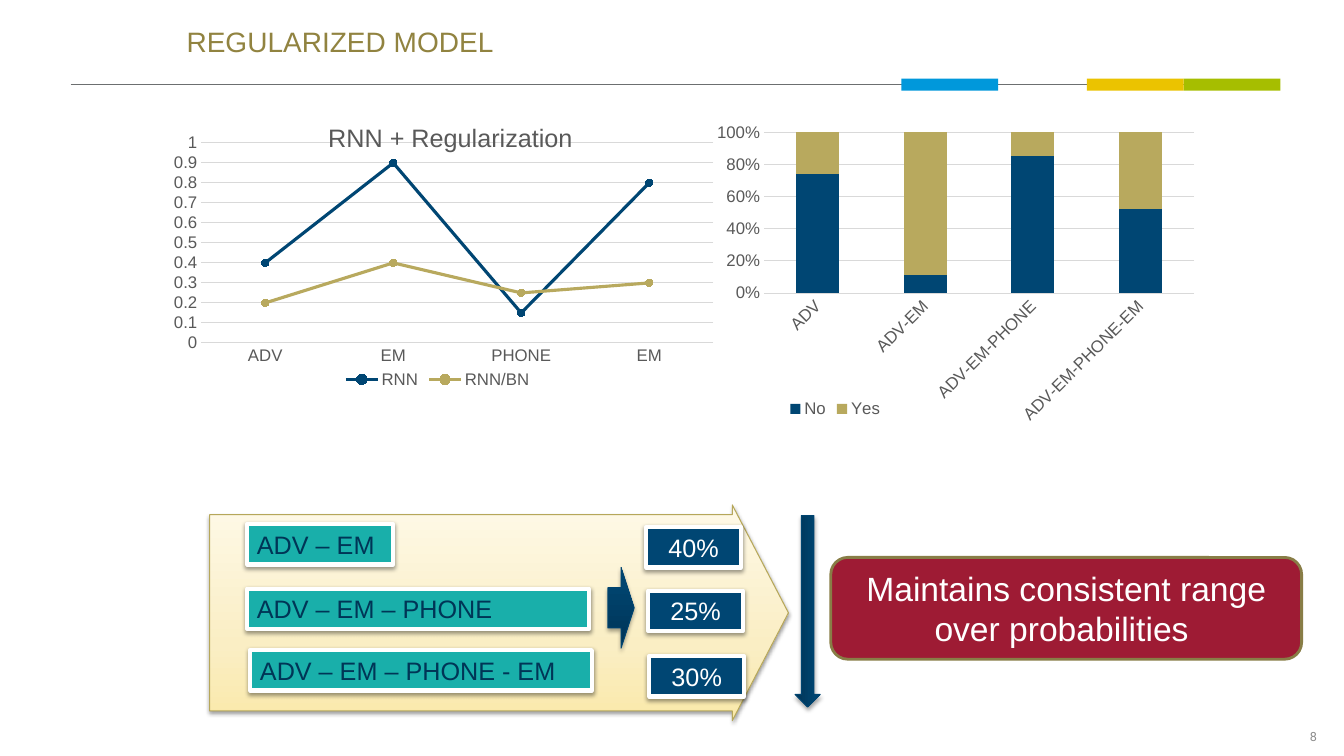
from lxml import etree
from pptx import Presentation
from pptx.chart.data import CategoryChartData
from pptx.dml.color import RGBColor
from pptx.enum.chart import XL_CHART_TYPE, XL_LEGEND_POSITION, XL_MARKER_STYLE, XL_TICK_MARK
from pptx.enum.shapes import MSO_CONNECTOR, MSO_SHAPE
from pptx.enum.text import MSO_ANCHOR, PP_ALIGN
from pptx.oxml import parse_xml
from pptx.oxml.ns import nsdecls, qn
from pptx.util import Inches, Pt

NAVY = RGBColor(0x00, 0x46, 0x73)
DARK_NAVY = RGBColor(0x00, 0x34, 0x56)
DEEP_BLUE = RGBColor(0x00, 0x44, 0x70)
INK = RGBColor(0x00, 0x35, 0x56)
KHAKI = RGBColor(0xB8, 0xA9, 0x5E)
KHAKI_EDGE = RGBColor(0xB6, 0xA7, 0x5A)
OLIVE = RGBColor(0x91, 0x83, 0x40)
DARK_OLIVE = RGBColor(0x88, 0x7D, 0x46)
TEAL = RGBColor(0x19, 0xAF, 0xAA)
CRIMSON = RGBColor(0x9E, 0x1B, 0x34)
WHITE = RGBColor(0xFF, 0xFF, 0xFF)
GRID = RGBColor(0xD9, 0xD9, 0xD9)
LABEL = RGBColor(0x59, 0x59, 0x59)
RULE = RGBColor(0x6C, 0x6F, 0x70)
PAGE_GRAY = RGBColor(0x8C, 0x8C, 0x8C)
GREEN = RGBColor(0xA6, 0xBE, 0x00)
YELLOW = RGBColor(0xEB, 0xC3, 0x00)
SKY = RGBColor(0x00, 0x98, 0xDB)
CREAM_STOPS = ((0, RGBColor(0xFA, 0xE9, 0xAA)), (35, RGBColor(0xFA, 0xEE, 0xC4)),
               (100, RGBColor(0xFE, 0xF9, 0xE7)))
NAVY_STOPS = ((0, DARK_NAVY), (80, RGBColor(0x00, 0x44, 0x6F)), (100, DEEP_BLUE))


class SlideBuilder:
    font_name = "Arial"

    def __init__(self, slide):
        self.slide = slide

    def style_font(self, font, size, color, name=None):
        font.name = name or self.font_name
        font.size = Pt(size)
        font.bold = False
        font.color.rgb = color

    def add_text(self, frame, text, size, color, align=PP_ALIGN.LEFT, name=None):
        frame.vertical_anchor = MSO_ANCHOR.MIDDLE
        paragraph = frame.paragraphs[0]
        paragraph.alignment = align
        run = paragraph.add_run()
        run.text = text
        self.style_font(run.font, size, color, name)

    def title(self, text, box):
        shape = self.slide.shapes.title
        shape.left, shape.top, shape.width, shape.height = map(Inches, box)
        frame = shape.text_frame
        frame.margin_left = frame.margin_right = frame.margin_top = frame.margin_bottom = 0
        self.add_text(frame, text, 20, OLIVE)
        frame.paragraphs[0].line_spacing = 0.97

    def page_number(self, text, box):
        frame = self.slide.shapes.add_textbox(*map(Inches, box)).text_frame
        frame.word_wrap = True
        self.add_text(frame, text, 9, PAGE_GRAY, PP_ALIGN.RIGHT, "Roboto")

    def rule(self, left, right, top):
        line = self.slide.shapes.add_connector(
            MSO_CONNECTOR.STRAIGHT, Inches(left), Inches(top), Inches(right), Inches(top))
        line.line.color.rgb = RULE
        line.line.width = Pt(1)
        etree.SubElement(line._element.spPr, qn("a:effectLst"))

    def shape(self, kind, box, fill=None, edge=None, edge_width=0.75):
        shape = self.slide.shapes.add_shape(kind, *map(Inches, box))
        shape.shadow.inherit = False
        if fill is not None:
            shape.fill.solid()
            shape.fill.fore_color.rgb = fill
        if edge is None:
            shape.line.fill.background()
        else:
            shape.line.color.rgb = edge
            shape.line.width = Pt(edge_width)
        return shape

    def cast_shadow(self, shape, opacity, distance):
        effects = shape._element.spPr.find(qn("a:effectLst"))
        effects.append(parse_xml(
            f'<a:outerShdw {nsdecls("a")} blurRad="{Pt(3.1)}" dist="{Pt(distance)}" '
            f'dir="5400000" rotWithShape="0"><a:srgbClr val="000000">'
            f'<a:alpha val="{opacity * 1000}"/></a:srgbClr></a:outerShdw>'))

    def arrow(self, box, stops, edge, opacity, distance, adjustments=(0.5, 0.5), rotation=0):
        shape = self.shape(MSO_SHAPE.RIGHT_ARROW, box, edge=edge)
        for index, value in enumerate(adjustments):
            shape.adjustments[index] = value
        shape.rotation = rotation
        marks = "".join(f'<a:gs pos="{position * 1000}"><a:srgbClr val="{color}"/></a:gs>'
                        for position, color in stops)
        geometry = shape._element.spPr.find(qn("a:prstGeom"))
        geometry.addnext(parse_xml(
            f'<a:gradFill {nsdecls("a")} rotWithShape="1"><a:gsLst>{marks}</a:gsLst>'
            f'<a:lin ang="16200000" scaled="0"/></a:gradFill>'))
        self.cast_shadow(shape, opacity, distance)

    def label(self, text, box, fill, color, align=PP_ALIGN.LEFT, wrap=True):
        shape = self.shape(MSO_SHAPE.RECTANGLE, box, fill, WHITE, 3)
        self.cast_shadow(shape, 38, 1.6)
        shape.text_frame.word_wrap = wrap
        self.add_text(shape.text_frame, text, 18, color, align)

    def callout(self, text, box):
        shape = self.shape(MSO_SHAPE.ROUNDED_RECTANGLE, box, CRIMSON, DARK_OLIVE, 2)
        shape.text_frame.word_wrap = True
        self.add_text(shape.text_frame, text, 24, WHITE, PP_ALIGN.CENTER)

    def place(self, element, left, top, width=None, height=None):
        for old in element.findall(qn("c:layout")):
            element.remove(old)
        target = '<c:layoutTarget val="inner"/>' if width else ""
        size = f'<c:w val="{width}"/><c:h val="{height}"/>' if width else ""
        layout = parse_xml(
            f'<c:layout {nsdecls("c")}><c:manualLayout>{target}<c:xMode val="edge"/>'
            f'<c:yMode val="edge"/><c:x val="{left}"/><c:y val="{top}"/>{size}'
            f'</c:manualLayout></c:layout>')
        if element.tag == qn("c:plotArea"):
            element.insert(0, layout)
        else:
            element[0].addnext(layout)

    def chart(self, kind, box, categories, series, plot_box, legend_at, step, number_format):
        data = CategoryChartData()
        data.categories = categories
        for name, values in series:
            data.add_series(name, values)
        chart = self.slide.shapes.add_chart(kind, *map(Inches, box), data).chart
        self.style_font(chart.font, 12, LABEL)
        chart.has_title = False
        chart.has_legend = True
        chart.legend.position = XL_LEGEND_POSITION.BOTTOM
        chart.legend.include_in_layout = False
        self.style_font(chart.legend.font, 12, LABEL)
        self.place(chart.legend._element, *legend_at)
        self.place(chart._chartSpace.chart.plotArea, *plot_box)
        for axis in (chart.category_axis, chart.value_axis):
            axis.major_tick_mark = axis.minor_tick_mark = XL_TICK_MARK.NONE
            self.style_font(axis.tick_labels.font, 12, LABEL)
        chart.category_axis.format.line.color.rgb = GRID
        chart.category_axis.format.line.width = Pt(0.75)
        values = chart.value_axis
        values.format.line.fill.background()
        values.major_gridlines.format.line.color.rgb = GRID
        values.major_gridlines.format.line.width = Pt(0.75)
        values.minimum_scale, values.maximum_scale, values.major_unit = 0, 1, step
        values.tick_labels.number_format = number_format
        values.tick_labels.number_format_is_linked = False
        chart.plots[0].vary_by_categories = False
        return chart

    def share_chart(self, *details):
        chart = self.chart(XL_CHART_TYPE.COLUMN_STACKED_100, *details, 0.2, "0%")
        chart.plots[0].gap_width = 150
        chart.plots[0].overlap = 100
        for series, color in zip(chart.plots[0].series, (NAVY, KHAKI)):
            series.format.fill.solid()
            series.format.fill.fore_color.rgb = color
        chart.category_axis._element.txPr.bodyPr.set("rot", "-2700000")

    def trend_chart(self, title, *details):
        chart = self.chart(XL_CHART_TYPE.LINE_MARKERS, *details, 0.1, "General")
        run = chart.chart_title.text_frame.paragraphs[0].add_run()
        run.text = title
        self.style_font(run.font, 18, LABEL)
        chart.chart_title.include_in_layout = True
        self.place(chart.chart_title._element, 0.27, 0.06)
        for series, color in zip(chart.plots[0].series, (NAVY, KHAKI)):
            series.smooth = False
            series.format.line.color.rgb = color
            series.format.line.width = Pt(2.25)
            series.marker.style = XL_MARKER_STYLE.CIRCLE
            series.marker.size = 5
            series.marker.format.fill.solid()
            series.marker.format.fill.fore_color.rgb = color
            series.marker.format.line.color.rgb = color


def main():
    presentation = Presentation()
    presentation.slide_width, presentation.slide_height = Inches(13.33), Inches(7.5)
    builder = SlideBuilder(presentation.slides.add_slide(presentation.slide_layouts[5]))
    builder.title("REGULARIZED MODEL", (1.85, 0.26, 9.05, 0.33))
    builder.page_number("8", (10.16, 7.16, 3, 0.3))
    builder.rule(0.7, 12.67, 0.84)
    for left, color in ((11.74, GREEN), (10.78, YELLOW), (8.94, SKY)):
        builder.shape(MSO_SHAPE.RECTANGLE, (left, 0.78, 0.96, 0.12), color)
    builder.share_chart(
        (6.91, 1.09, 5.14, 3.19), ("ADV", "ADV-EM", "ADV-EM-PHONE", "ADV-EM-PHONE-EM"),
        (("No", (74, 11, 85, 52)), ("Yes", (26, 89, 15, 48))),
        (0.13, 0.07, 0.83, 0.5), (0.17, 0.89))
    builder.arrow((2.08, 5.01, 5.74, 2.14), CREAM_STOPS, KHAKI_EDGE, 38, 1.6, (0.91, 0.26))
    for text, left, top, width, wrap in (
            ("ADV – EM", 2.45, 5.2, 1.45, False),
            ("ADV – EM – PHONE", 2.45, 5.84, 3.39, True),
            ("ADV – EM – PHONE - EM", 2.48, 6.45, 3.39, True)):
        builder.label(text, (left, top, width, 0.4), TEAL, INK, wrap=wrap)
    for text, left, top in (("40%", 6.41, 5.23), ("25%", 6.43, 5.86), ("30%", 6.44, 6.51)):
        builder.label(text, (left, top, 0.94, 0.4), NAVY, WHITE, PP_ALIGN.CENTER)
    builder.arrow((6.03, 5.63, 0.26, 0.8), NAVY_STOPS, DEEP_BLUE, 35, 1.8)
    builder.callout("Maintains consistent range over probabilities ", (8.24, 5.53, 4.67, 1.01))
    builder.arrow((7.06, 5.94, 1.9, 0.25), NAVY_STOPS, DEEP_BLUE, 35, 1.8, rotation=90)
    builder.trend_chart(
        "RNN + Regularization", (1.72, 0.98, 5.52, 2.92), ("ADV", "EM", "PHONE", "EM"),
        (("RNN", (0.4, 0.9, 0.15, 0.8)), ("RNN/BN", (0.2, 0.4, 0.25, 0.3))),
        (0.05, 0.15, 0.92, 0.68), (0.3, 0.91))
    presentation.save("out.pptx")


if __name__ == "__main__":
    main()
